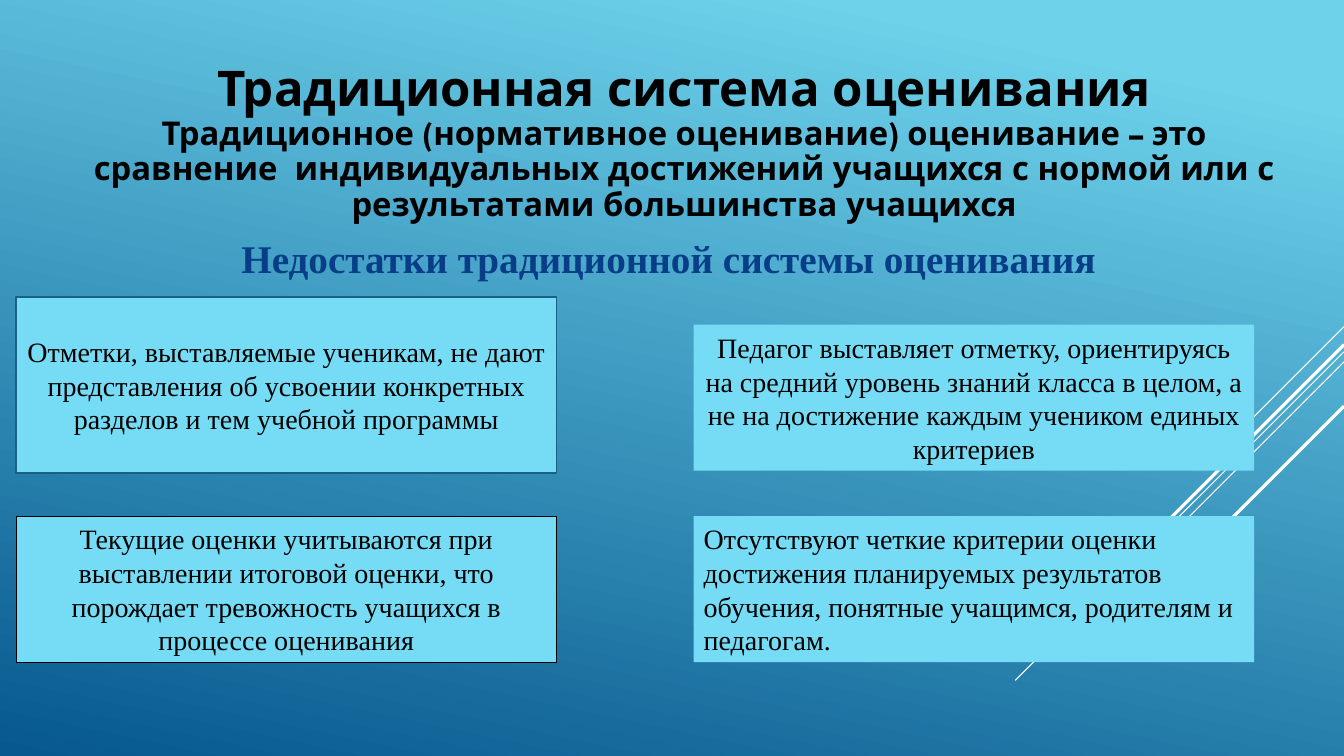
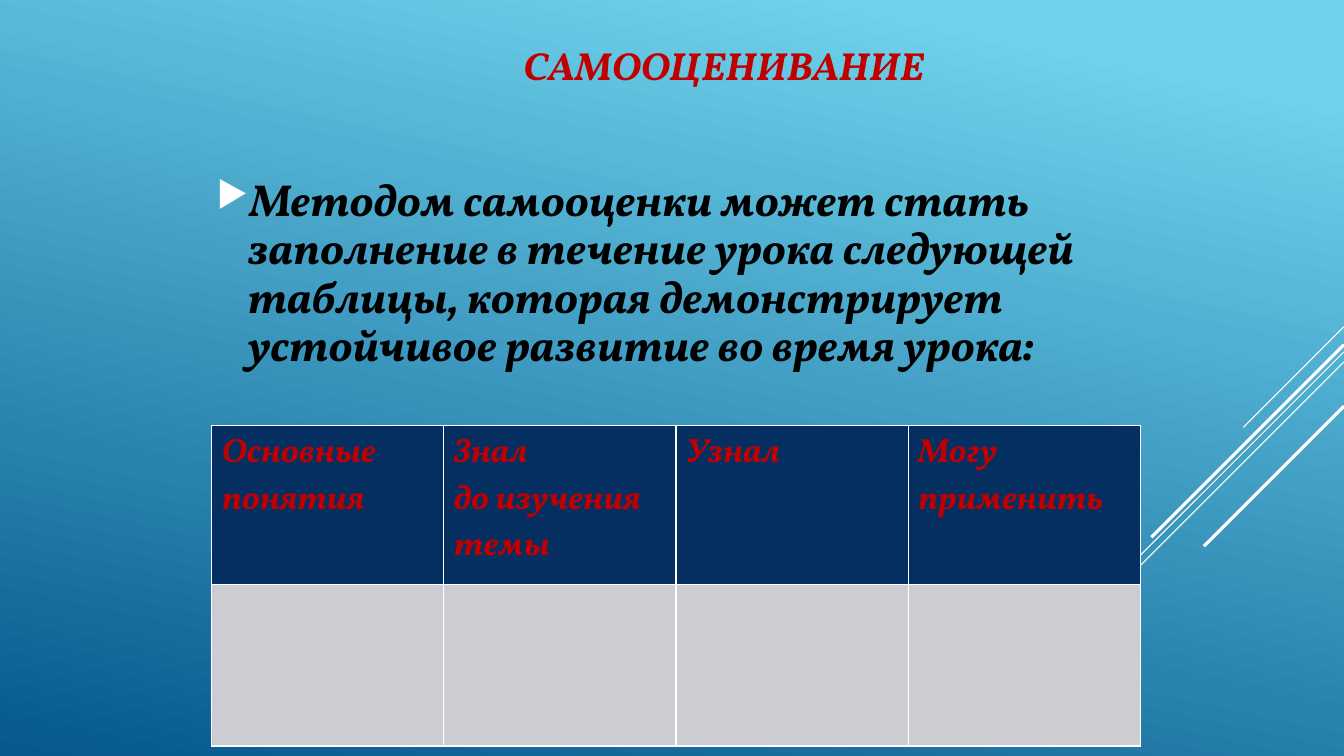
from dataclasses import dataclass
from lxml.etree import SubElement
from pptx import Presentation
from pptx.dml.color import RGBColor
from pptx.enum.shapes import MSO_CONNECTOR, MSO_SHAPE
from pptx.enum.text import MSO_ANCHOR, MSO_AUTO_SIZE, PP_ALIGN
from pptx.oxml.ns import qn
from pptx.util import Inches, Pt


@dataclass(frozen=True)
class Theme:
    sky: str = "6ED2EB"
    deep: str = "06588E"
    white: str = "FFFFFF"
    black: str = "000000"
    red: str = "C00000"
    heading_blue: str = "073E87"
    card: str = "76DBF4"
    card_edge: str = "1A5F84"
    table_head: str = "052F61"
    table_body: str = "CCCDD2"
    heading_font: str = "League Spartan"
    card_font: str = "Times New Roman"
    accent_font: str = "Vollkorn"
    heading_size: float = 35.1
    definition_size: float = 23.4
    body_size: float = 32
    subtitle_size: float = 28
    table_size: float = 24
    card_size: float = 20


THEME = Theme()


def text_style(name, size, color, bold=False, italic=False):
    return {
        "color": color,
        "format": {"name": name, "size": Pt(size), "bold": bold, "italic": italic},
    }


HEADING = text_style(THEME.heading_font, THEME.heading_size, THEME.black, True)
DEFINITION = text_style(THEME.heading_font, THEME.definition_size, THEME.black, True)
SUBTITLE = text_style(THEME.card_font, THEME.subtitle_size, THEME.heading_blue, True)
CARD = text_style(THEME.card_font, THEME.card_size, THEME.black)
ACCENT_TITLE = text_style(
    THEME.accent_font, THEME.subtitle_size, THEME.red, True, True
)
ACCENT_BODY = text_style(THEME.accent_font, THEME.body_size, THEME.black, True, True)
TABLE_HEAD = text_style(THEME.accent_font, THEME.table_size, THEME.red, True, True)


def apply_format(target, values):
    for name, value in values.items():
        setattr(target, name, value)


def place(shape, box):
    names = ("left", "top", "width", "height")
    apply_format(shape, {name: Inches(value) for name, value in zip(names, box)})


def prepare_frame(frame, anchor=MSO_ANCHOR.TOP):
    apply_format(frame, {
        "word_wrap": True,
        "auto_size": MSO_AUTO_SIZE.NONE,
        "vertical_anchor": anchor,
    })


def add_run(paragraph, text, style):
    run = paragraph.add_run()
    run.text = text
    apply_format(run.font, style["format"])
    run.font.color.rgb = RGBColor.from_string(style["color"])


def write_paragraph(paragraph, lines, **paragraph_format):
    apply_format(paragraph, paragraph_format)
    for index, (text, style) in enumerate(lines):
        if index:
            paragraph.add_line_break()
        add_run(paragraph, text, style)


def set_title(slide, box, lines, anchor=MSO_ANCHOR.TOP, **paragraph_format):
    title = slide.shapes.title
    place(title, box)
    prepare_frame(title.text_frame, anchor)
    write_paragraph(title.text_frame.paragraphs[0], lines, **paragraph_format)


def add_text(slide, box, lines, anchor=MSO_ANCHOR.TOP, **paragraph_format):
    shape = slide.shapes.add_textbox(*map(Inches, box))
    prepare_frame(shape.text_frame, anchor)
    paragraph = shape.text_frame.paragraphs[0]
    write_paragraph(paragraph, lines, **paragraph_format)
    return paragraph


def add_bullet(paragraph, indent):
    properties = paragraph._p.get_or_add_pPr()
    properties.set("marL", str(Inches(indent)))
    properties.set("indent", str(-Inches(indent)))
    color = SubElement(properties, qn("a:buClr"))
    SubElement(color, qn("a:srgbClr"), val=THEME.white)
    SubElement(properties, qn("a:buSzPct"), val="80000")
    SubElement(properties, qn("a:buChar"), char="▶")


def style_background(layout):
    fill = layout.background.fill
    fill.gradient()
    fill.gradient_angle = 258
    stops = ((0.1, THEME.sky), (1, THEME.deep))
    for stop, (position, color) in zip(fill.gradient_stops, stops):
        stop.position = position
        stop.color.rgb = RGBColor.from_string(color)


def add_diagonals(slide, layout, right):
    diagonals = (
        (3.24, 1, 0.75), (3.49, 3.26, 0.75), (3.59, 2.07, 0.75),
        (3.42, 1.91, 2.25), (4.03, 1.39, 2.25),
    )
    for number, (top, reach, weight) in enumerate(diagonals, 20):
        ends = (right, top, right - reach, top + reach)
        connector = slide.shapes.add_connector(
            MSO_CONNECTOR.STRAIGHT, *map(Inches, ends)
        )
        connector.line.width = Pt(weight)
        connector.line.color.rgb = RGBColor.from_string(THEME.white)
        SubElement(connector.element.spPr, qn("a:effectLst"))
        connector.element.nvCxnSpPr.cNvPr.set("id", str(number))
        layout.shapes.element.append(connector.element)


def add_card(slide, box, text, alignment, edge):
    shape = slide.shapes.add_shape(MSO_SHAPE.RECTANGLE, *map(Inches, box))
    shape.shadow.inherit = False
    shape.fill.solid()
    shape.fill.fore_color.rgb = RGBColor.from_string(THEME.card)
    if edge:
        color, weight = edge
        shape.line.color.rgb = RGBColor.from_string(color)
        shape.line.width = Pt(weight)
    else:
        shape.line.fill.background()
    prepare_frame(shape.text_frame, MSO_ANCHOR.MIDDLE)
    write_paragraph(
        shape.text_frame.paragraphs[0], [(text, CARD)], alignment=alignment
    )


def style_cell(cell, color):
    cell.fill.solid()
    cell.fill.fore_color.rgb = RGBColor.from_string(color)
    properties = cell._tc.get_or_add_tcPr()
    for index, side in enumerate(("lnL", "lnR", "lnT", "lnB")):
        border = properties.makeelement(qn(f"a:{side}"), {"w": str(Pt(1))})
        fill = SubElement(border, qn("a:solidFill"))
        SubElement(fill, qn("a:srgbClr"), val=THEME.white)
        properties.insert(index, border)


def add_knowledge_table(slide, box, headings, row_heights):
    graphic = slide.shapes.add_table(
        len(row_heights), len(headings), *map(Inches, box)
    )
    table = graphic.table
    for row, height in zip(table.rows, row_heights):
        row.height = Inches(height)
    for column, lines in enumerate(headings):
        table.columns[column].width = Inches(box[2] / len(headings))
        head = table.cell(0, column)
        style_cell(head, THEME.table_head)
        style_cell(table.cell(1, column), THEME.table_body)
        for index, text in enumerate(lines):
            frame = head.text_frame
            paragraph = frame.add_paragraph() if index else frame.paragraphs[0]
            add_run(paragraph, text, TABLE_HEAD)


def build_traditional_slide(slide):
    set_title(
        slide, (0.75, 0.16, 12.07, 2.53),
        [
            ("Традиционная система оценивания", HEADING),
            (
                "Традиционное (нормативное оценивание) оценивание – это "
                "сравнение  индивидуальных достижений учащихся с нормой или с "
                "результатами большинства учащихся",
                DEFINITION,
            ),
        ],
        MSO_ANCHOR.MIDDLE, alignment=PP_ALIGN.CENTER, line_spacing=0.9,
    )
    add_text(
        slide, (0.27, 2.28, 12.72, 0.6),
        [("Недостатки традиционной системы оценивания", SUBTITLE)],
        alignment=PP_ALIGN.CENTER,
    )
    left, left_width = 0.16, 5.36
    right, right_width = 6.88, 5.56
    bottom_row, height = 5.12, 1.45
    cards = (
        (
            (left, 2.95, left_width, 1.74),
            "Отметки, выставляемые ученикам, не дают представления об усвоении "
            "конкретных разделов и тем учебной программы",
            PP_ALIGN.CENTER, (THEME.card_edge, 1.25),
        ),
        (
            (right, 3.22, right_width, height),
            "Педагог выставляет отметку, ориентируясь на средний уровень знаний "
            "класса в целом, а не на достижение каждым учеником единых критериев",
            PP_ALIGN.CENTER, None,
        ),
        (
            (left, bottom_row, left_width, height),
            "Текущие оценки учитываются при выставлении итоговой оценки, что "
            "порождает тревожность учащихся в процессе оценивания",
            PP_ALIGN.CENTER, (THEME.black, 0.75),
        ),
        (
            (right, bottom_row, right_width, height),
            "Отсутствуют четкие критерии оценки достижения планируемых "
            "результатов обучения, понятные учащимся, родителям и педагогам.",
            PP_ALIGN.LEFT, None,
        ),
    )
    for card in cards:
        add_card(slide, *card)


def build_self_assessment_slide(slide):
    set_title(
        slide, (5.09, 0.36, 4.33, 0.57), [("САМООЦЕНИВАНИЕ", ACCENT_TITLE)],
        alignment=PP_ALIGN.LEFT,
    )
    method = add_text(
        slide, (2.05, 0.36, 9.53, 4.73),
        [(
            "Методом самооценки может стать заполнение в течение урока следующей "
            "таблицы, которая демонстрирует устойчивое развитие во время урока:",
            ACCENT_BODY,
        )],
        MSO_ANCHOR.MIDDLE, line_spacing=0.9, space_after=Pt(6),
    )
    add_bullet(method, 0.31)
    headings = (
        ("Основные понятия",), ("Знал", "до изучения темы"),
        ("Узнал",), ("Могу применить",),
    )
    add_knowledge_table(slide, (2.1, 4.22, 9.21, 3.18), headings, (1.58, 1.6))


def main():
    presentation = Presentation()
    apply_format(
        presentation, {"slide_width": Inches(13.33), "slide_height": Inches(7.5)}
    )
    layout = presentation.slide_layouts.get_by_name("Title Only")
    style_background(layout)
    traditional = presentation.slides.add_slide(layout)
    add_diagonals(traditional, layout, 13.33)
    build_traditional_slide(traditional)
    build_self_assessment_slide(presentation.slides.add_slide(layout))
    presentation.save("out.pptx")


if __name__ == "__main__":
    main()
